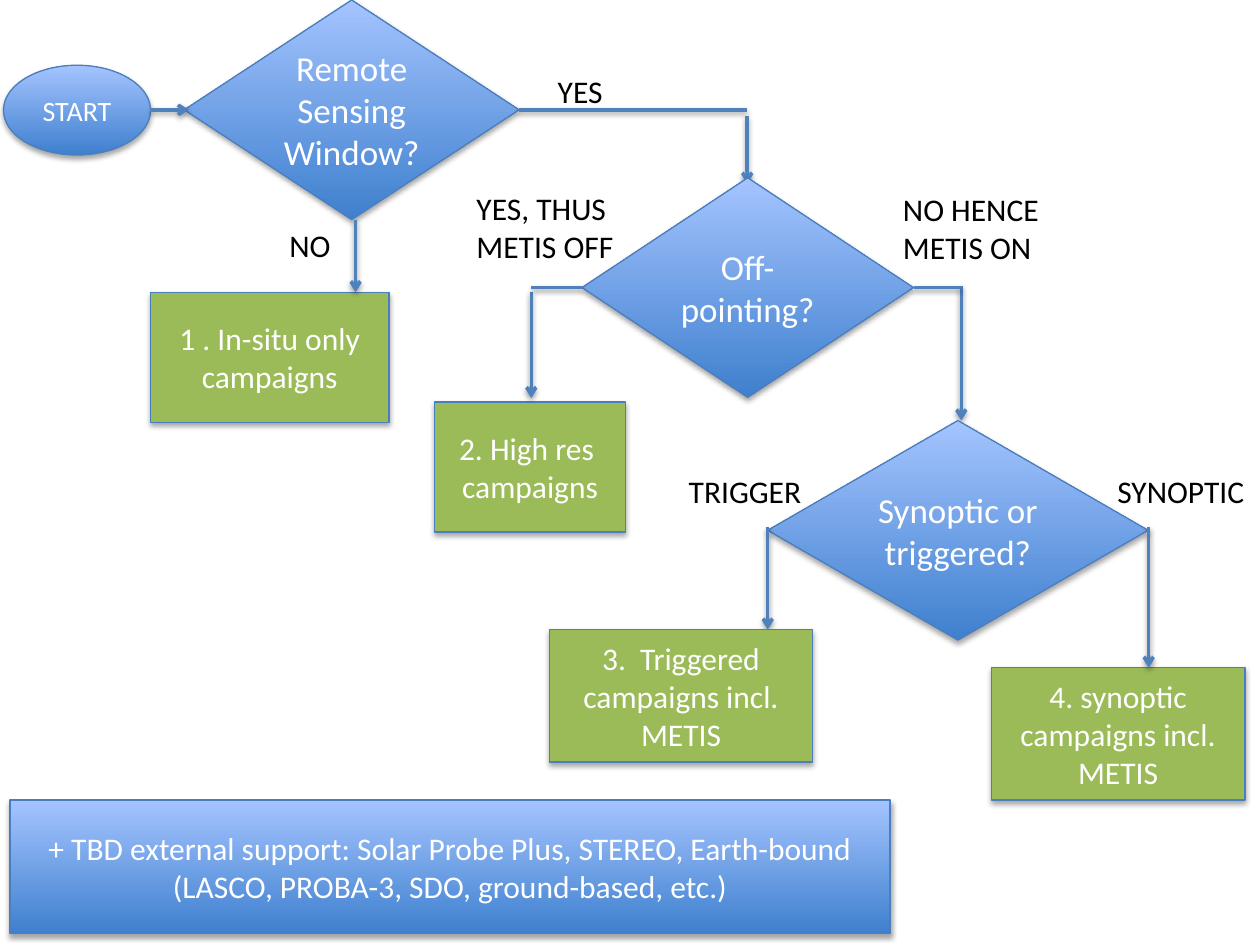
import pptx
import pptx.util
import pptx.dml.color
import pptx.enum.shapes
import pptx.enum.text
import pptx.oxml
import pptx.oxml.ns

Pt = pptx.util.Pt
Kind = pptx.enum.shapes.MSO_SHAPE
Align = pptx.enum.text.PP_ALIGN
qn = pptx.oxml.ns.qn
NS = pptx.oxml.ns.nsdecls("a")


def paint(code):
    return pptx.dml.color.RGBColor.from_string(code)


def write(frame, text, size=18, color="FFFFFF", align=Align.CENTER, font="Calibri"):
    for i, line in enumerate(text.split("\n")):
        para = frame.paragraphs[0] if i == 0 else frame.add_paragraph()
        para.alignment = align
        run = para.add_run()
        run.text = line
        run.font.name = font
        run.font.size = Pt(size)
        run.font.color.rgb = paint(color)


class Chart:
    """Flow chart style and the slide it is drawn on."""

    edge, wire, green = "4B7EBC", "4F81BD", "9BBB59"
    blend = ("3F80CE", "A4C4FF")

    def __init__(self, slide):
        self.shapes = slide.shapes

    def shade(self, item, drop, alpha):
        props = item.element.spPr
        for old in props.findall(qn("a:effectLst")):
            props.remove(old)
        props.append(pptx.oxml.parse_xml(
            f'<a:effectLst {NS}><a:outerShdw blurRad="{Pt(3.15)}" dist="{Pt(drop)}" '
            f'dir="5400000" rotWithShape="0"><a:srgbClr val="000000">'
            f'<a:alpha val="{alpha * 1000}"/></a:srgbClr></a:outerShdw></a:effectLst>'))

    def node(self, kind, box, text, size=18, fill=None):
        item = self.shapes.add_shape(kind, *map(Pt, box))
        if fill:
            item.fill.solid()
            item.fill.fore_color.rgb = paint(fill)
        else:
            item.fill.gradient()
            item.fill.gradient_angle = 90
            for stop, code, pos in zip(item.fill.gradient_stops, self.blend, (0, 1)):
                stop.color.rgb = paint(code)
                stop.position = pos
        item.line.color.rgb = paint(self.edge)
        item.line.width = Pt(0.75)
        item.shadow.inherit = False
        self.shade(item, 1.8, 35)
        frame = item.text_frame
        frame.word_wrap = True
        frame.vertical_anchor = pptx.enum.text.MSO_ANCHOR.MIDDLE
        write(frame, text, size=size)

    def ask(self, box, text):
        self.node(Kind.DIAMOND, box, text, size=20)

    def goal(self, box, text):
        self.node(Kind.RECTANGLE, box, text, fill=self.green)

    def link(self, x1, y1, x2, y2, head=True):
        item = self.shapes.add_connector(
            pptx.enum.shapes.MSO_CONNECTOR.STRAIGHT, *map(Pt, (x1, y1, x2, y2)))
        item.line.color.rgb = paint(self.wire)
        item.line.width = Pt(2)
        if head:
            stroke = item.element.spPr.find(qn("a:ln"))
            stroke.append(pptx.oxml.parse_xml(f'<a:tailEnd {NS} type="arrow"/>'))
        self.shade(item, 1.6, 38)

    def label(self, x, y, wide, text):
        high = 29 if "\n" not in text else 51
        item = self.shapes.add_textbox(*map(Pt, (x, y, wide, high)))
        frame = item.text_frame
        frame.word_wrap = False
        frame.auto_size = pptx.enum.text.MSO_AUTO_SIZE.SHAPE_TO_FIT_TEXT
        write(frame, text, color="000000", align=Align.LEFT)


def main():
    deck = pptx.Presentation()
    deck.slide_width, deck.slide_height = Pt(720), Pt(540)
    flow = Chart(deck.slides.add_slide(deck.slide_layouts[6]))

    flow.node(Kind.OVAL, (2, 37.3, 84, 51.3), "START", size=16)
    flow.ask((105.3, 0, 191.3, 125.5), "Remote Sensing Window?")
    flow.link(86, 62.75, 108, 62.75)

    flow.link(296.6, 62.75, 427, 62.75, head=False)
    flow.link(427, 66.2, 427, 105)
    flow.ask((332.6, 101.6, 189.4, 125.5), "Off-pointing?")
    flow.label(311.6, 37.5, 41, "YES")

    flow.goal((86, 167, 136.3, 74.3), "1 . In-situ only campaigns")
    flow.link(203.2, 125.5, 203.2, 167)
    flow.label(158.2, 125.5, 38, "NO")

    flow.node(Kind.RECTANGLE, (5.8, 457.2, 502.8, 76.3),
              "+ TBD external support: Solar Probe Plus, STEREO, Earth-bound "
              "(LASCO, PROBA-3, SDO, ground-based, etc.)")

    flow.link(549.3, 163.5, 549.3, 240.3)
    flow.link(522, 164.4, 549, 164.4, head=False)
    flow.label(508.9, 105.2, 93, "NO HENCE\nMETIS ON")
    flow.ask((438.7, 240.3, 217.4, 125.5), "Synoptic or triggered?")

    flow.goal((248.2, 229.7, 109.4, 74.3), "2. High res \ncampaigns")
    flow.link(303.6, 167, 303.6, 227.5)
    flow.link(303.6, 164.4, 332.6, 164.4, head=False)
    flow.label(265.2, 104.5, 94, "YES, THUS\nMETIS OFF")

    flow.link(438.7, 301, 438.7, 359.8)
    flow.goal((313.9, 359.8, 150.5, 75.6), "3.  Triggered campaigns incl. METIS")
    flow.label(386.5, 266.4, 80, "TRIGGER")

    flow.goal((566.4, 381.6, 145, 75.6), "4. synoptic campaigns incl. METIS")
    flow.link(656.4, 301, 656.4, 381.6)
    flow.label(631.4, 266.4, 88.6, "SYNOPTIC")

    deck.save("out.pptx")


if __name__ == "__main__":
    main()
